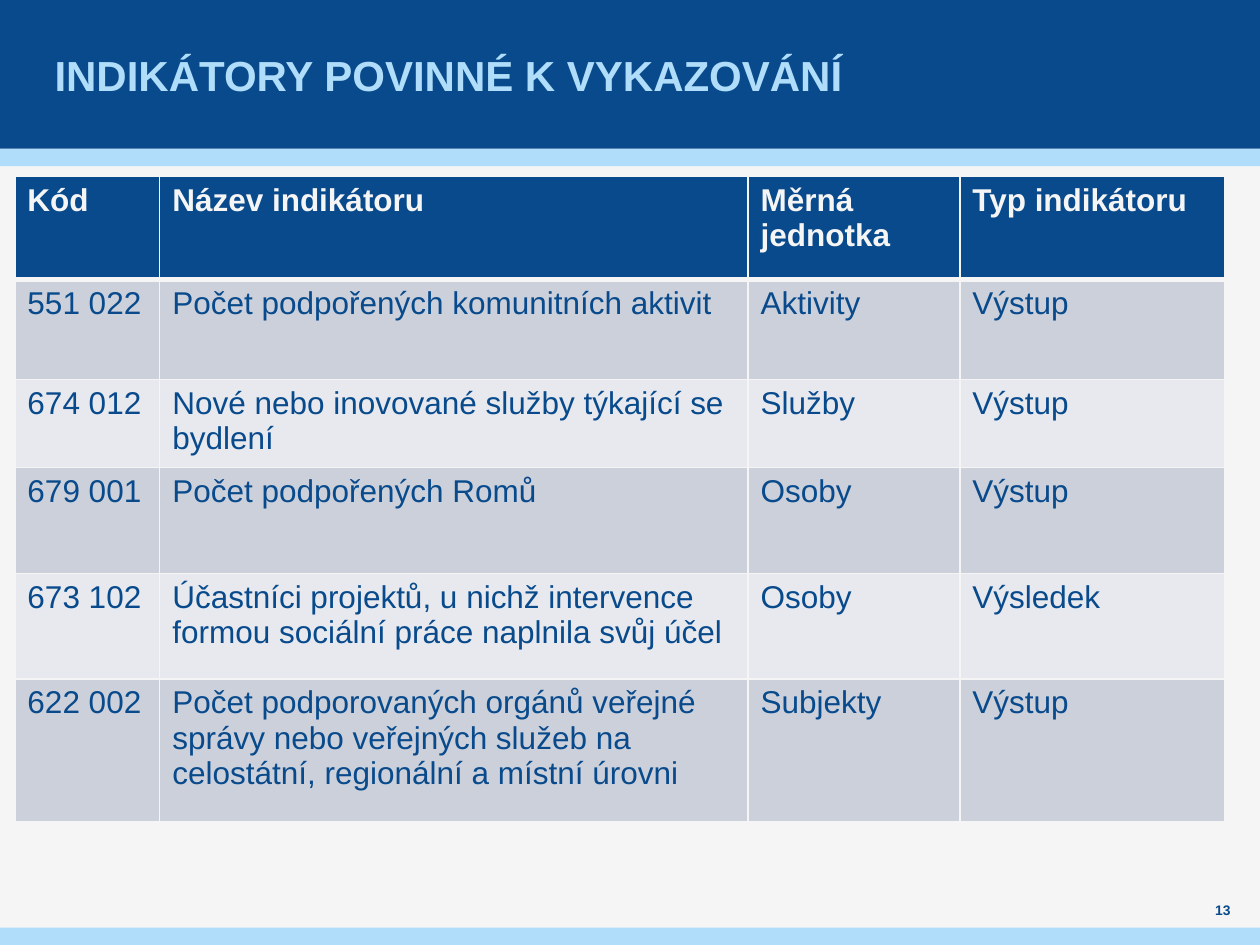
from lxml.etree import SubElement
from pptx import Presentation
from pptx.dml.color import RGBColor
from pptx.enum.shapes import MSO_SHAPE as Shape
from pptx.enum.text import MSO_ANCHOR as Anchor, PP_ALIGN as Align
from pptx.oxml.ns import qn
from pptx.util import Cm, Pt

NAVY, SKY, PAPER = "084A8B", "AFDDFA", "F5F5F5"
BANDS = ["CCD0DA", "E7E9EE"]


def paint(fill, color):
    fill.solid()
    fill.fore_color.rgb = RGBColor.from_string(color)


def write(frame, text, size=18, color=NAVY, bold=False, align=Align.LEFT):
    frame.word_wrap = True
    paragraph = frame.paragraphs[0]
    paragraph.alignment = align
    run = paragraph.add_run()
    run.text = text
    run.font.name = "Arial"
    run.font.size = Pt(size)
    run.font.bold = bold
    paint(run.font.fill, color)


presentation = Presentation()
presentation.slide_width, presentation.slide_height = Cm(25.4), Cm(19.05)
slide = presentation.slides.add_slide(presentation.slide_layouts[6])
paint(slide.background.fill, PAPER)

# Header and footer bands
for top, height, color in [(3, 0.35, SKY), (0, 3, NAVY), (18.7, 0.35, SKY)]:
    band = slide.shapes.add_shape(Shape.RECTANGLE, 0, Cm(top), Cm(25.4), Cm(height))
    band.shadow.inherit = False
    band.line.fill.background()
    paint(band.fill, color)

# Title and slide number
labels = [
    ("INDIKÁTORY POVINNÉ K VYKAZOVÁNÍ", (1, 0, 23.4, 3), 0.1,
     dict(size=24, color=SKY, bold=True)),
    ("13", (24, 18.1, 1.3, 0.5), 0, dict(size=7.9, bold=True, align=Align.CENTER)),
]
for text, box, inset, style in labels:
    frame = slide.shapes.add_textbox(*map(Cm, box)).text_frame
    frame.margin_left = frame.margin_right = Cm(inset)
    frame.margin_top = frame.margin_bottom = 0
    frame.vertical_anchor = Anchor.MIDDLE
    write(frame, text, **style)

# Indicator table
rows = [
    ("Kód", "Název indikátoru", "Měrná jednotka", "Typ indikátoru"),
    ("551 022", "Počet podpořených komunitních aktivit", "Aktivity", "Výstup"),
    ("674 012", "Nové nebo inovované služby týkající se bydlení", "Služby", "Výstup"),
    ("679 001", "Počet podpořených Romů", "Osoby", "Výstup"),
    ("673 102", "Účastníci projektů, u nichž intervence formou sociální práce "
     "naplnila svůj účel", "Osoby", "Výsledek"),
    ("622 002", "Počet podporovaných orgánů veřejné správy nebo veřejných služeb "
     "na celostátní, regionální a místní úrovni", "Subjekty", "Výstup"),
]
column_widths = [2.92, 11.86, 4.27, 5.35]
row_heights = [2.08, 2.01, 1.75, 2.13, 2.13, 2.87]
table = slide.shapes.add_table(
    len(rows), len(column_widths), Cm(0.3), Cm(3.56),
    Cm(sum(column_widths)), Cm(sum(row_heights))).table
for column, width in zip(table.columns, column_widths):
    column.width = Cm(width)
for row, height in zip(table.rows, row_heights):
    row.height = Cm(height)

for row_index, row in enumerate(rows):
    header = row_index == 0
    for column_index, text in enumerate(row):
        cell = table.cell(row_index, column_index)
        properties = cell._tc.get_or_add_tcPr()
        # Borders go before the fill; the line under the header is thicker
        for side in "LRTB":
            thick = (row_index, side) in [(0, "B"), (1, "T")]
            border = SubElement(properties, qn(f"a:ln{side}"), w=str(Pt(3 if thick else 1)))
            line_fill = SubElement(border, qn("a:solidFill"))
            SubElement(line_fill, qn("a:srgbClr"), val=PAPER)
        paint(cell.fill, NAVY if header else BANDS[(row_index - 1) % 2])
        write(cell.text_frame, text, color=PAPER if header else NAVY, bold=header)

presentation.save("out.pptx")
